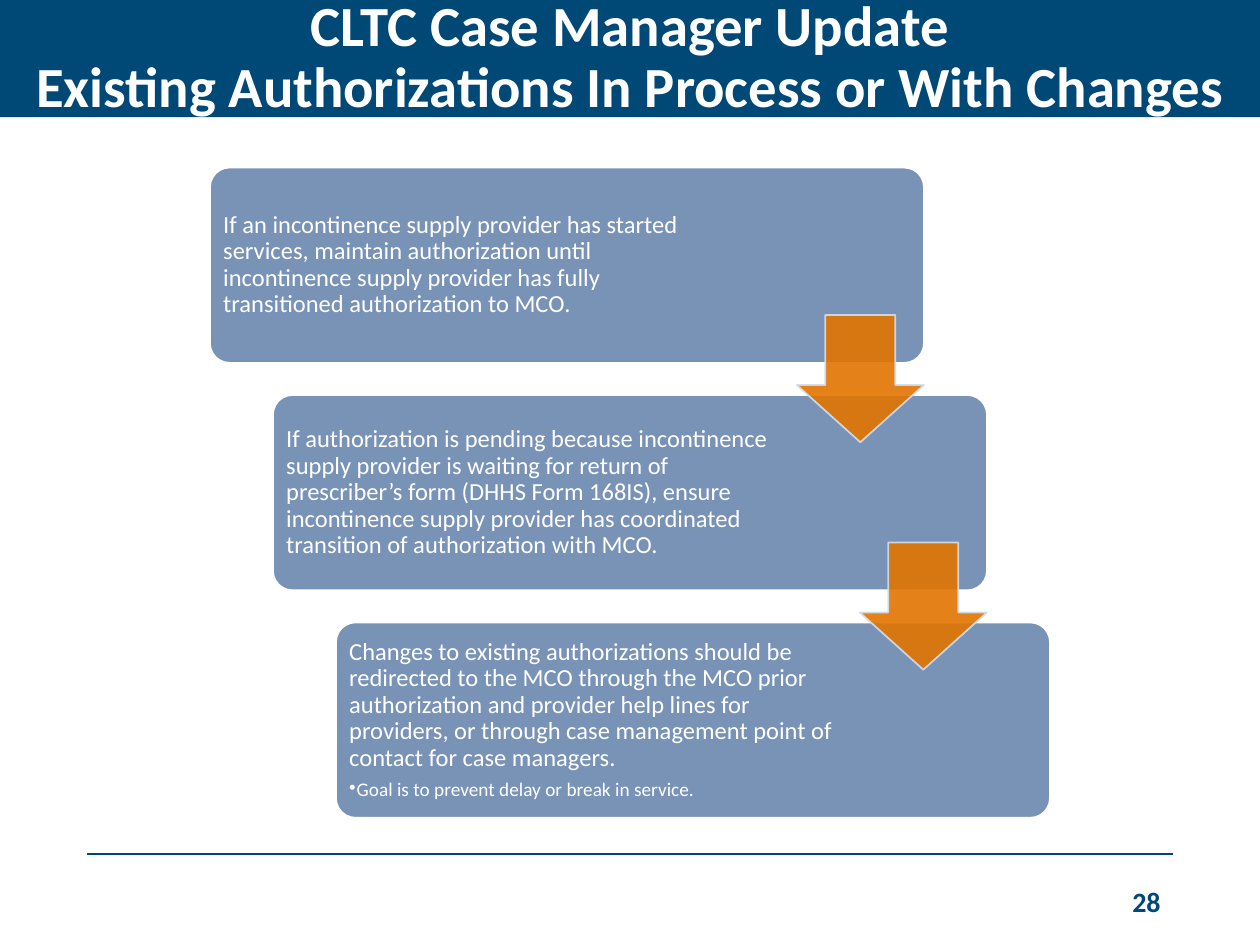
from dataclasses import dataclass

from lxml.etree import SubElement
from pptx import Presentation
from pptx.dml.color import RGBColor
from pptx.enum.shapes import MSO_CONNECTOR, MSO_SHAPE
from pptx.enum.text import MSO_ANCHOR, MSO_AUTO_SIZE, PP_ALIGN
from pptx.oxml.ns import qn
from pptx.util import Inches, Pt


@dataclass(frozen=True)
class Theme:
    font: str = "Calibri"
    navy: str = "004875"
    card: str = "7993B7"
    arrow: str = "E27500"
    arrow_edge: str = "D2DEEF"
    white: str = "FFFFFF"
    title: float = 32.4
    number: float = 16
    body: float = 14
    bullet: float = 11


THEME = Theme()
WIDTH, HEIGHT = 10, 7.5

STEPS = [
    ("If an incontinence supply provider has started services, maintain authorization until "
     "incontinence supply provider has fully transitioned authorization to MCO.", None, 4),
    ("If authorization is pending because incontinence supply provider is waiting for return of "
     "prescriber’s form (DHHS Form 168IS), ensure incontinence supply provider has coordinated "
     "transition of authorization with MCO.", None, 4.07),
    ("Changes to existing authorizations should be redirected to the MCO through the MCO prior "
     "authorization and provider help lines for providers, or through case management point of "
     "contact for case managers.", "Goal is to prevent delay or break in service.", 4.07),
]


def rgb(color):
    return RGBColor.from_string(color)


def inches(box):
    return [Inches(v) for v in box]


def format_runs(p, size, color, bold=False):
    for r in p.runs:
        r.font.name = THEME.font
        r.font.size = Pt(size)
        r.font.bold = bold
        r.font.color.rgb = rgb(color)


def paint(sp, fill, line, alpha=None):
    sp.shadow.inherit = False
    sp.fill.solid()
    sp.fill.fore_color.rgb = rgb(fill)
    sp.line.color.rgb = rgb(line)
    sp.line.width = Pt(1)
    if alpha:
        for clr in sp._element.spPr.iter(qn("a:srgbClr")):
            SubElement(clr, qn("a:alpha")).set("val", str(alpha * 1000))


def add_text_box(slide, box, inset=None):
    tf = slide.shapes.add_textbox(*inches(box)).text_frame
    tf.word_wrap = True
    tf.vertical_anchor = MSO_ANCHOR.MIDDLE
    if inset is not None:
        tf.margin_left = tf.margin_right = tf.margin_top = tf.margin_bottom = Inches(inset)
    return tf


def add_title(slide, box, text):
    sp = slide.shapes.title
    sp.left, sp.top, sp.width, sp.height = inches(box)
    sp.fill.solid()
    sp.fill.fore_color.rgb = rgb(THEME.navy)
    tf = sp.text_frame
    tf.text = text
    tf.word_wrap = True
    tf.auto_size = MSO_AUTO_SIZE.NONE
    tf.vertical_anchor = MSO_ANCHOR.MIDDLE
    p = tf.paragraphs[0]
    p.alignment = PP_ALIGN.CENTER
    p.line_spacing = 0.9
    format_runs(p, THEME.title, THEME.white, True)


def add_footer(slide, box, number):
    left, top, width, height = box
    rule = slide.shapes.add_connector(
        MSO_CONNECTOR.STRAIGHT, *inches((left, top, left + width, top)))
    rule.line.color.rgb = rgb(THEME.navy)
    rule.line.width = Pt(1)
    SubElement(rule._element.spPr, qn("a:effectLst"))
    num_w, num_h = 2.25, 0.4
    tf = add_text_box(slide, (left + width - num_w, top + height - num_h, num_w, num_h))
    tf.text = number
    p = tf.paragraphs[0]
    p.alignment = PP_ALIGN.RIGHT
    format_runs(p, THEME.number, THEME.navy, True)


def add_card(slide, box, text, bullet, text_w):
    left, top, width, height = box
    sp = slide.shapes.add_shape(MSO_SHAPE.ROUNDED_RECTANGLE, *inches(box))
    sp.adjustments[0] = 0.1
    paint(sp, THEME.card, THEME.white)
    pad = 0.045
    tf = add_text_box(slide, (left + pad, top + pad, text_w, height - 2 * pad), 0.06)
    tf.text = text
    p = tf.paragraphs[0]
    p.line_spacing = 0.9
    p.space_after = Pt(5)
    format_runs(p, THEME.body, THEME.white)
    if bullet:
        p = tf.add_paragraph()
        p.text = bullet
        p.level = 1
        p.line_spacing = 0.9
        p.space_after = Pt(1.65)
        pPr = p._p.get_or_add_pPr()
        pPr.set("marL", str(Inches(0.06)))
        pPr.set("indent", str(-Inches(0.06)))
        SubElement(pPr, qn("a:buChar")).set("char", "•")
        format_runs(p, THEME.bullet, THEME.white)


def add_arrow(slide, box):
    sp = slide.shapes.add_shape(MSO_SHAPE.DOWN_ARROW, *inches(box))
    sp.adjustments[0] = 0.55
    sp.adjustments[1] = 0.45
    paint(sp, THEME.arrow, THEME.arrow_edge, 90)


def add_staircase(slide, box, steps):
    left, top, width, height = box
    shift, card_h, arrow = 0.5, 1.55, 1.01
    gaps = len(steps) - 1
    card_w = width - gaps * shift
    pitch = (height - card_h) / gaps
    for i, step in enumerate(steps):
        add_card(slide, (left + i * shift, top + i * pitch, card_w, card_h), *step)
    for i in range(gaps):
        add_arrow(slide, (left + i * shift + card_w - arrow,
                          top + i * pitch + 1.17, arrow, arrow))


def main():
    prs = Presentation()
    prs.slide_width, prs.slide_height = Inches(WIDTH), Inches(HEIGHT)
    s = prs.slides.add_slide(prs.slide_layouts[5])
    add_title(s, (0, 0, WIDTH, 0.93),
              "CLTC Case Manager Update\vExisting Authorizations In Process or With Changes")
    add_footer(s, (0.69, 6.78, WIDTH - 2 * 0.69, 0.57), "28")
    add_staircase(s, (WIDTH / 6, 1.33, WIDTH * 2 / 3, 5.16), STEPS)
    prs.save("out.pptx")


if __name__ == "__main__":
    main()
